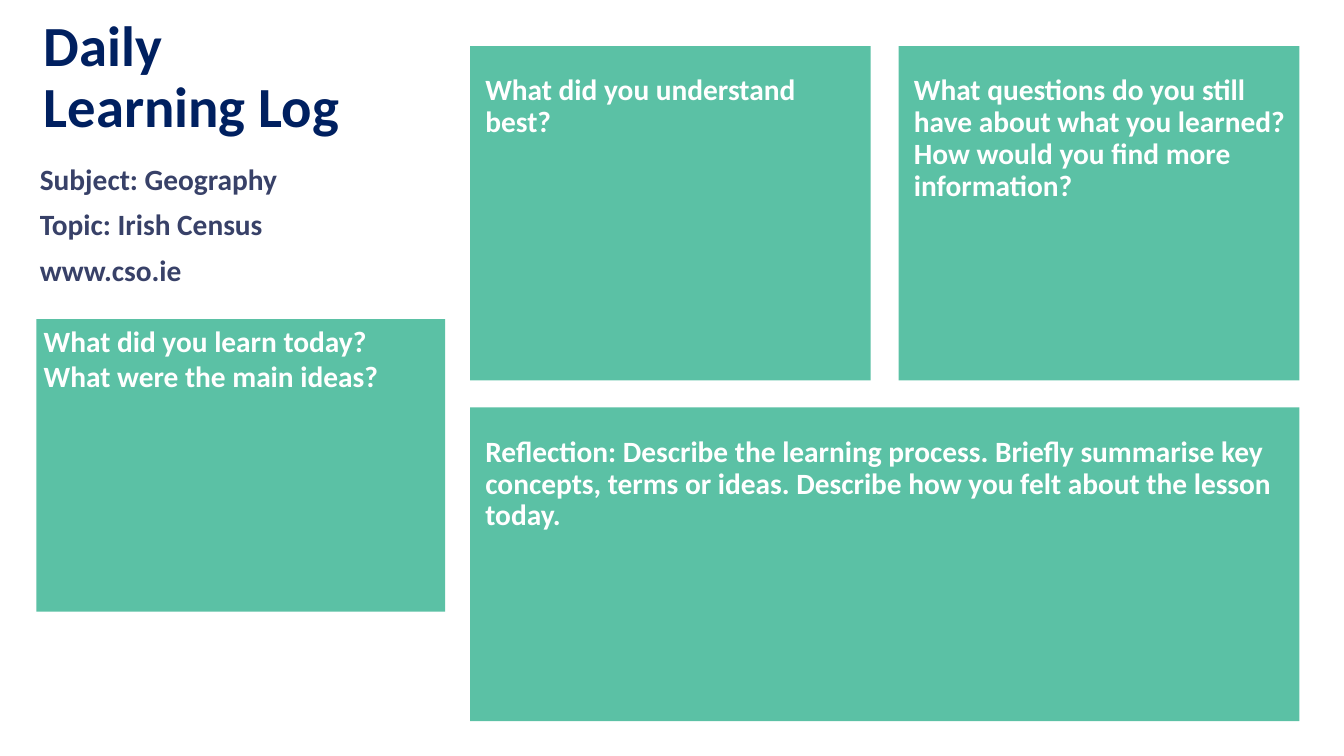
from dataclasses import dataclass

from pptx import Presentation
from pptx.dml.color import RGBColor
from pptx.enum.shapes import MSO_SHAPE
from pptx.enum.text import MSO_ANCHOR, PP_ALIGN
from pptx.util import Cm, Pt

RECTANGLE = MSO_SHAPE.RECTANGLE
TOP, MIDDLE = MSO_ANCHOR.TOP, MSO_ANCHOR.MIDDLE
LEFT = PP_ALIGN.LEFT

FONT = "Calibri"
GREEN, WHITE, NAVY, SLATE = "5BC1A5", "FFFFFF", "002060", "384168"
PLAIN_INSETS = (0.25, 0.13, 0.25, 0.13)
CARD_INSETS = (0.51, 0.99, 0.2, 0.13)

# Grid of prompts, in centimetres
GRID_LEFT, GRID_TOP = 15.8, 1.55
CARD_WIDTH, CARD_HEIGHT = 13.46, 11.23
COLUMN_GAP, ROW_GAP = 0.94, 0.91
GRID_WIDTH = 2 * CARD_WIDTH + COLUMN_GAP
SECOND_LEFT = GRID_LEFT + CARD_WIDTH + COLUMN_GAP
REFLECTION_TOP = GRID_TOP + CARD_HEIGHT + ROW_GAP


@dataclass
class Block:
    """A block of text; lengths in centimetres, insets left, top, right, bottom."""
    left: float
    top: float
    width: float
    height: float
    lines: tuple[str, ...]
    color: str = WHITE
    size: float = 28
    insets: tuple[float, ...] = CARD_INSETS
    line_spacing: float = 0.9
    anchor: MSO_ANCHOR = TOP


HEADINGS = (
    Block(1.22, 1.55, 13.61, 2.16, ("Daily\vLearning Log",), NAVY, 54,
          PLAIN_INSETS, anchor=MIDDLE),
    Block(1.09, 5.41, 13.74, 4.55,
          ("Subject: Geography", "Topic: Irish Census", "www.cso.ie"),
          SLATE, insets=PLAIN_INSETS),
)
PROMPTS = (
    Block(SECOND_LEFT, GRID_TOP, CARD_WIDTH, CARD_HEIGHT,
          ("What questions do you still have about what you learned? "
           "How would you find more information?",)),
    Block(GRID_LEFT, GRID_TOP, CARD_WIDTH, CARD_HEIGHT,
          ("What did you understand best?",)),
    Block(GRID_LEFT, REFLECTION_TOP, GRID_WIDTH, 10.54,
          ("Reflection: Describe the learning process. Briefly summarise key "
           "concepts, terms or ideas. Describe how you felt about the lesson today.",)),
    Block(1.22, 10.72, 13.74, 9.83,
          ("What did you learn today? What were the main ideas?",),
          insets=PLAIN_INSETS, line_spacing=1.0),
)


def rgb(value: str) -> RGBColor:
    return RGBColor.from_string(value)


def write_text(shape, block: Block) -> None:
    frame = shape.text_frame
    frame.word_wrap = True
    frame.vertical_anchor = block.anchor
    (frame.margin_left, frame.margin_top,
     frame.margin_right, frame.margin_bottom) = map(Cm, block.insets)
    frame.text = "\n".join(block.lines)
    for index, paragraph in enumerate(frame.paragraphs):
        paragraph.alignment = LEFT
        paragraph.line_spacing = block.line_spacing
        paragraph.space_before = Pt(13.3 if index else 0)
        for run in paragraph.runs:
            run.font.name = FONT
            run.font.size = Pt(block.size)
            run.font.bold = True
            run.font.color.rgb = rgb(block.color)


def add_heading(slide, block: Block) -> None:
    box = slide.shapes.add_textbox(
        Cm(block.left), Cm(block.top), Cm(block.width), Cm(block.height))
    write_text(box, block)


def add_prompt(slide, block: Block) -> None:
    card = slide.shapes.add_shape(
        RECTANGLE, Cm(block.left), Cm(block.top), Cm(block.width), Cm(block.height))
    card.shadow.inherit = False
    card.fill.solid()
    card.fill.fore_color.rgb = rgb(GREEN)
    card.line.fill.background()
    write_text(card, block)


def main() -> None:
    presentation = Presentation()
    presentation.slide_width, presentation.slide_height = Cm(45.16), Cm(25.4)
    slide = presentation.slides.add_slide(presentation.slide_layouts[6])

    # Title and lesson details
    for heading in HEADINGS:
        add_heading(slide, heading)

    # Question cards
    for prompt in PROMPTS:
        add_prompt(slide, prompt)

    presentation.save("out.pptx")


if __name__ == "__main__":
    main()
